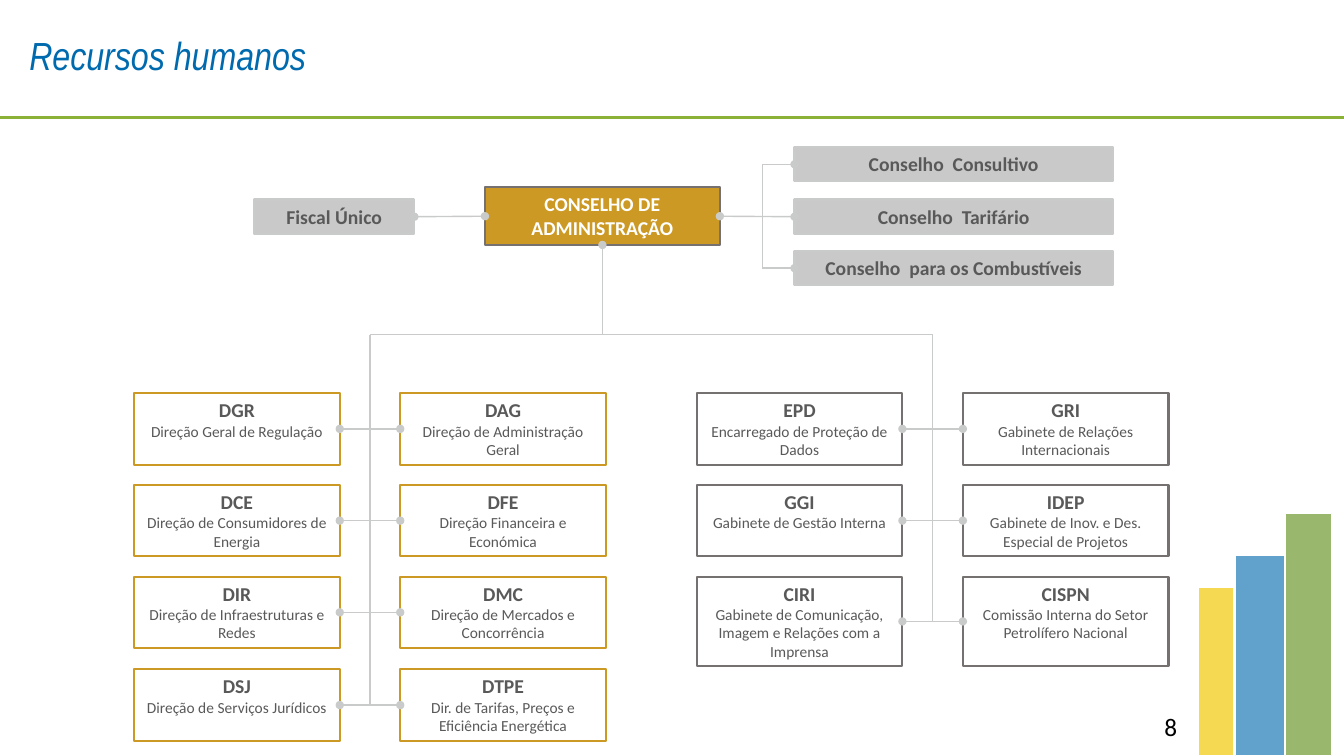
import pptx
import pptx.dml.color
import pptx.enum.shapes
import pptx.enum.text
import pptx.oxml.ns
import pptx.util
from lxml import etree

COLOURS = {
    "blue": "006AAF", "green": "8BB236", "leaf": "61911B", "yellow": "F3C700",
    "gold": "CC9925", "slate": "767171", "grey": "C9C9C9", "rule": "C9CBCA",
    "text": "595959", "white": "FFFFFF", "black": "000000",
}
TITLE = "Recursos humanos"
PAGE = "8"
BOARD = "CONSELHO DE ADMINISTRAÇÃO"
AUDITOR = "Fiscal Único"
# name, top
ADVISORY = [
    ("Conselho  Consultivo", 146),
    ("Conselho  Tarifário", 198),
    ("Conselho  para os Combustíveis", 249),
]
# Each row: left unit, right unit
DIRECTORATES = [
    (("DGR", "Direção Geral de Regulação"), ("DAG", "Direção de Administração Geral")),
    (("DCE", "Direção de Consumidores de Energia"), ("DFE", "Direção Financeira e Económica")),
    (("DIR", "Direção de Infraestruturas e Redes"), ("DMC", "Direção de Mercados e Concorrência")),
    (("DSJ", "Direção de Serviços Jurídicos"), ("DTPE", "Dir. de Tarifas, Preços e Eficiência Energética")),
]
OFFICES = [
    (("EPD", "Encarregado de Proteção de Dados"), ("GRI", "Gabinete de Relações Internacionais")),
    (("GGI", "Gabinete de Gestão Interna"), ("IDEP", "Gabinete de Inov. e Des. Especial de Projetos")),
    (("CIRI", "Gabinete de Comunicação, Imagem e Relações com a Imprensa"),
     ("CISPN", "Comissão Interna do Setor Petrolífero Nacional")),
]
# units, left edge, outline, height of each row
BRANCHES = [
    (DIRECTORATES, 133, "gold", (71, 71, 71, 71)),
    (OFFICES, 691, "slate", (71, 71, 89)),
]
# left, top, width, colour, opacity in percent
CORNER_BARS = [
    (1275, 509, 46, "leaf", 64),
    (1225, 551, 49, "blue", 62),
    (1189, 583, 34, "yellow", 68),
]
SLIDE_W, SLIDE_H = 1333, 750
ROW_TOPS = (390, 481, 572, 664)
UNIT_W, UNIT_PITCH = 204, 264
CROSSBAR_Y, ADVISORY_SPINE_X = 332, 756
TOP, LEFT, BOTTOM, RIGHT = 0, 1, 2, 3


def px(length):
    """Turn px, 100 to the inch, into EMU."""
    return pptx.util.Emu(round(length * 9144))


def rgb(name):
    return pptx.dml.color.RGBColor.from_string(COLOURS[name])


def write(frame, paragraphs, align, wrap=True):
    """Fill a text frame with (text, font values, colour) paragraphs."""
    frame.word_wrap = wrap
    frame.vertical_anchor = pptx.enum.text.MSO_ANCHOR.TOP
    for index, (text, font_values, colour) in enumerate(paragraphs):
        paragraph = frame.add_paragraph() if index else frame.paragraphs[0]
        paragraph.alignment = align
        run = paragraph.add_run()
        run.text = text
        for attribute, value in font_values.items():
            setattr(run.font, attribute, value)
        run.font.color.rgb = rgb(colour)


def add_box(left, top, width, height, fill, outline, weight=1.5, paragraphs=()):
    box = slide.shapes.add_shape(
        pptx.enum.shapes.MSO_SHAPE.RECTANGLE, px(left), px(top), px(width), px(height))
    box.shadow.inherit = False
    box.fill.solid()
    box.fill.fore_color.rgb = rgb(fill)
    box.line.color.rgb = rgb(outline)
    box.line.width = pptx.util.Pt(weight)
    write(box.text_frame, paragraphs, pptx.enum.text.PP_ALIGN.CENTER)
    return box


def add_line(start, end, colour="rule", weight=1):
    """Draw a line; an end is an (x, y) point or a (box, side) joint, which gets a dot."""
    def is_joint(place):
        return not isinstance(place[0], (int, float))

    points = [(0, 0) if is_joint(place) else place for place in (start, end)]
    line = slide.shapes.add_connector(
        pptx.enum.shapes.MSO_CONNECTOR.STRAIGHT, *(px(v) for point in points for v in point))
    line.line.color.rgb = rgb(colour)
    line.line.width = pptx.util.Pt(weight)
    outline = line.line._get_or_add_ln()
    for place, join, tag in ((start, line.begin_connect, "a:headEnd"),
                             (end, line.end_connect, "a:tailEnd")):
        if is_joint(place):
            join(*place)
            etree.SubElement(outline, pptx.oxml.ns.qn(tag), type="oval")
    etree.SubElement(line._element.spPr, pptx.oxml.ns.qn("a:effectLst"))


def middle(box):
    """Height of a box's middle, in px."""
    return round((box.top + box.height / 2) / 9144, 2)


HEADING = {"name": "Calibri", "size": pptx.util.Pt(14), "bold": True}
DETAIL = {"name": "Calibri", "size": pptx.util.Pt(11), "bold": False}

deck = pptx.Presentation()
deck.slide_width, deck.slide_height = px(SLIDE_W), px(SLIDE_H)
slide = deck.slides.add_slide(deck.slide_layouts[5])

# Frame of the slide
title = slide.shapes.title
title.left, title.top, title.width, title.height = px(19), px(26), px(306), px(57)
title_font = {"name": "Arial Narrow", "size": pptx.util.Pt(28), "italic": True}
write(title.text_frame, [(TITLE, title_font, "blue")], pptx.enum.text.PP_ALIGN.LEFT, wrap=False)
add_line((0, 117), (SLIDE_W, 117), "green", 2.25)
for left, top, width, colour, opacity in CORNER_BARS:
    bar = add_box(left, top, width, SLIDE_H - top, colour, "white", 0.75)
    tint = bar.fill._xPr.find(".//" + pptx.oxml.ns.qn("a:srgbClr"))
    etree.SubElement(tint, pptx.oxml.ns.qn("a:alpha"), val=str(opacity * 1000))

# Board, auditor and advisory councils
board = add_box(481, 186, 233, 57, "gold", "slate", paragraphs=[(BOARD, HEADING, "white")])
auditor = add_box(252, 198, 159, 34, "grey", "rule", paragraphs=[(AUDITOR, HEADING, "text")])
councils = [add_box(788, top, 316, 34, "grey", "rule", paragraphs=[(name, HEADING, "text")])
            for name, top in ADVISORY]
first, central, last = councils
add_line((board, LEFT), (auditor, RIGHT))
add_line((board, RIGHT), (central, LEFT))
add_line((ADVISORY_SPINE_X, middle(first)), (ADVISORY_SPINE_X, middle(last)))
for council in (first, last):
    add_line((ADVISORY_SPINE_X, middle(council)), (council, LEFT))

# Directorates and offices, in pairs joined across a trunk
trunks = []
for rows, left, outline, heights in BRANCHES:
    trunk_x = left + (UNIT_W + UNIT_PITCH) / 2
    trunks.append(trunk_x)
    for row, top, height in zip(rows, ROW_TOPS, heights):
        pair = [add_box(left + column * UNIT_PITCH, top, UNIT_W, height, "white", outline,
                        paragraphs=[(code, HEADING, "text"), (name, DETAIL, "text")])
                for column, (code, name) in enumerate(row)]
        add_line((pair[0], RIGHT), (pair[1], LEFT))
    add_line((trunk_x, CROSSBAR_Y), (trunk_x, middle(pair[0])))
add_line((trunks[0], CROSSBAR_Y), (trunks[1], CROSSBAR_Y))
add_line((board, BOTTOM), (597.5, CROSSBAR_Y))

page = slide.shapes.add_textbox(px(1145), px(701), px(40), px(28))
page_font = {"name": "Calibri", "size": pptx.util.Pt(18)}
write(page.text_frame, [(PAGE, page_font, "black")], pptx.enum.text.PP_ALIGN.LEFT)

deck.save("out.pptx")
